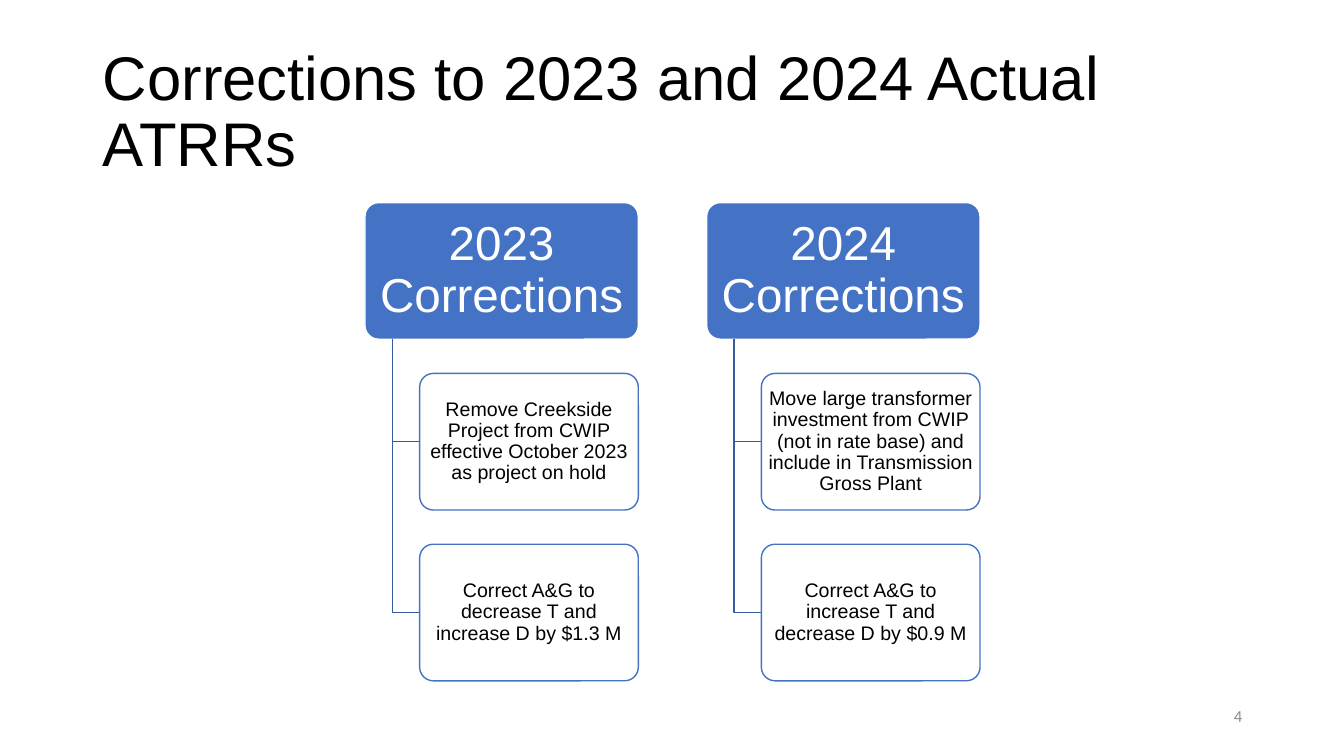
from dataclasses import dataclass

from lxml.etree import SubElement
from pptx import Presentation
from pptx.dml.color import RGBColor
from pptx.enum.shapes import MSO_SHAPE as Shape
from pptx.enum.text import MSO_ANCHOR as Anchor, MSO_AUTO_SIZE as AutoSize, PP_ALIGN as Align
from pptx.oxml.ns import qn
from pptx.util import Inches, Pt


@dataclass(frozen=True)
class Theme:
    """Colours, fonts and type sizes of the deck."""
    black: RGBColor = RGBColor.from_string("000000")
    white: RGBColor = RGBColor.from_string("FFFFFF")
    blue: RGBColor = RGBColor.from_string("4472C4")
    branch: RGBColor = RGBColor.from_string("365B9D")
    grey: RGBColor = RGBColor.from_string("8C8C8C")
    font: str = "Arial"
    number_font: str = "Calibri"
    title: int = 44
    heading: int = 34
    body: int = 14
    number: int = 12


THEME = Theme()
COLUMNS = [
    ("2023 Corrections", [
        "Remove Creekside Project from CWIP effective October 2023 as project on hold",
        "Correct A&G to decrease T and increase D by $1.3 M",
    ]),
    ("2024 Corrections", [
        "Move large transformer investment from CWIP (not in rate base) "
        "and include in Transmission Gross Plant",
        "Correct A&G to increase T and decrease D by $0.9 M",
    ]),
]


def write(shape, text, size, color, align, font=THEME.font, spacing=0.9, insets=(0.1, 0.05)):
    """Put one formatted, vertically centred paragraph in a shape."""
    frame = shape.text_frame
    across, down = map(Inches, insets)
    frame_format = {
        "word_wrap": True, "auto_size": AutoSize.NONE, "vertical_anchor": Anchor.MIDDLE,
        "margin_left": across, "margin_right": across,
        "margin_top": down, "margin_bottom": down,
    }
    for name, value in frame_format.items():
        setattr(frame, name, value)
    para = frame.paragraphs[0]
    para.alignment, para.line_spacing = align, spacing
    span = para.add_run()
    span.text = text
    for name, value in {"name": font, "size": Pt(size)}.items():
        setattr(span.font, name, value)
    span.font.color.rgb = color


def add_title(page, text, left, top, width, height):
    """Place and format the title placeholder."""
    title = page.shapes.title
    place = {"left": left, "top": top, "width": width, "height": height}
    for name, value in place.items():
        setattr(title, name, Inches(value))
    write(title, text, THEME.title, THEME.black, Align.LEFT)


def add_card(page, text, box, fill, line, size, color, insets):
    """Add a rounded card with centred text and return it."""
    card = page.shapes.add_shape(Shape.ROUNDED_RECTANGLE, *map(Inches, box))
    card.adjustments[0] = 0.1
    card.shadow.inherit = False
    card.fill.solid()
    card.fill.fore_color.rgb = fill
    card.line.color.rgb = line
    card.line.width = Pt(1)
    write(card, text, size, color, Align.CENTER, insets=insets)
    return card


def add_branch(page, left, top, right, bottom):
    """Draw an elbow down from a heading and across to a card."""
    builder = page.shapes.build_freeform(Inches(left), Inches(top))
    builder.add_line_segments(
        [(Inches(left), Inches(bottom)), (Inches(right), Inches(bottom))], close=False)
    branch = builder.convert_to_shape()
    branch.shadow.inherit = False
    branch.fill.background()
    branch.line.color.rgb = THEME.branch
    branch.line.width = Pt(1)


def add_column(page, heading, items, left, top, width):
    """Build a heading card with its items hanging below it."""
    height = width / 2
    pitch = height * 1.25
    indent = width / 5
    add_card(page, heading, (left, top, width, height), THEME.blue, THEME.white,
             THEME.heading, THEME.white, (0.07, 0.05))
    for row, item in enumerate(items, 1):
        card_top = top + row * pitch
        add_branch(page, left + indent / 2, top + height, left + indent, card_top + height / 2)
        card = add_card(page, item, (left + indent, card_top, width - indent, height),
                        THEME.white, THEME.blue, THEME.body, THEME.black, (0.03, 0.02))
        color = card.fill.fore_color
        SubElement(next(card.element.spPr.iter(qn("a:srgbClr"))), qn("a:alpha"), val="90000")


def add_diagram(page, columns, left, top, width):
    """Lay out equal columns separated by a quarter of their width."""
    column_width = width / (1.25 * len(columns) - 0.25)
    for index, (heading, items) in enumerate(columns):
        add_column(page, heading, items, left + index * 1.25 * column_width, top, column_width)


def add_page_number(page, number, left, top, width, height):
    """Add the page number at the right of its box."""
    box = page.shapes.add_textbox(*map(Inches, (left, top, width, height)))
    write(box, number, THEME.number, THEME.grey, Align.RIGHT, THEME.number_font, 1.0)


def main():
    """Build and save the deck."""
    deck = Presentation()
    deck.slide_width, deck.slide_height = Inches(13.33), Inches(7.5)
    page = deck.slides.add_slide(deck.slide_layouts[5])
    add_title(page, "Corrections to 2023 and 2024 Actual ATRRs", 0.92, 0.4, 11.5, 1.45)
    add_diagram(page, COLUMNS, 3.62, 2.01, 6.1)
    add_page_number(page, "4", 9.42, 6.9, 3, 0.4)
    deck.save("out.pptx")


if __name__ == "__main__":
    main()
